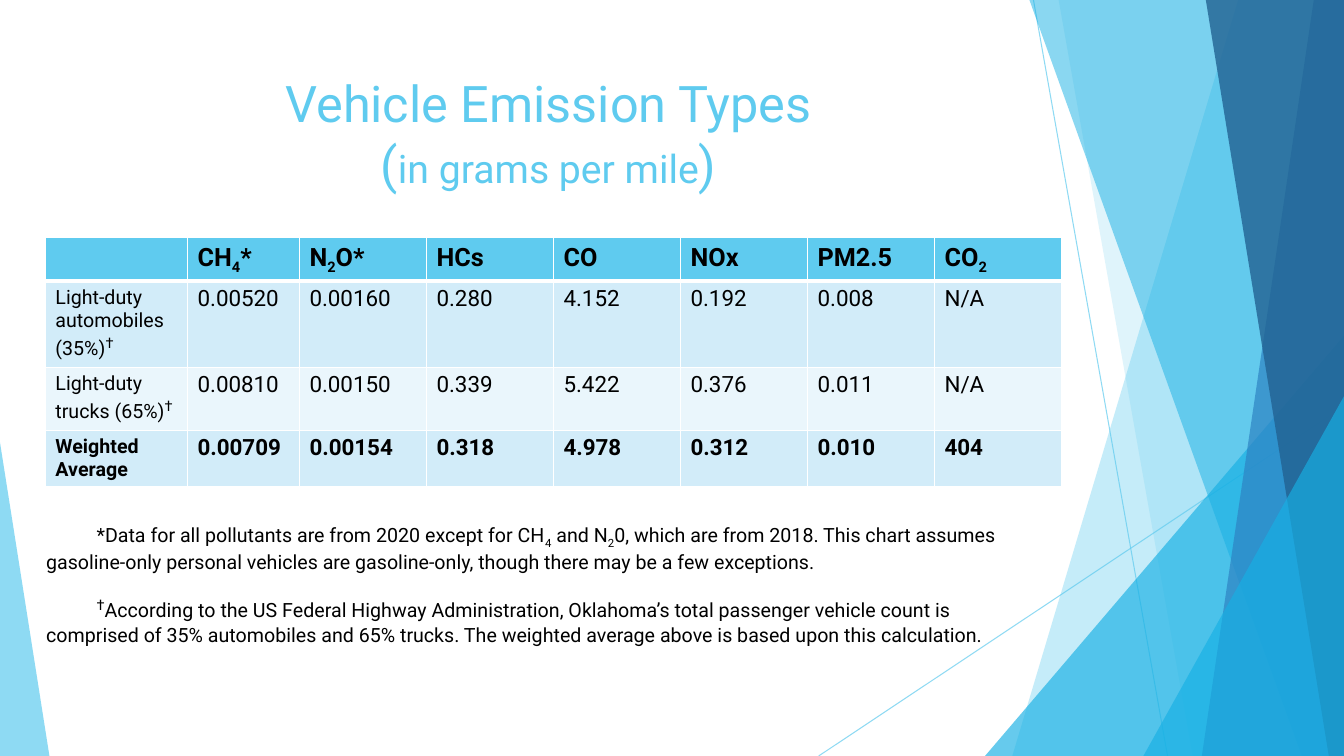
"""Build a slide with a table of vehicle emissions in grams per mile."""
from dataclasses import dataclass

from lxml import etree
from pptx import Presentation
from pptx import util as u
from pptx.dml.color import RGBColor
from pptx.enum import shapes, text
from pptx.oxml.ns import qn


@dataclass(frozen=True)
class Theme:
    font: str = "Roboto"
    sky: str = "5FCBEF"
    cyan: str = "17B0E4"
    blue: str = "2E83C3"
    navy: str = "226292"
    ink: str = "000000"
    white: str = "FFFFFF"
    odd_row: str = "D2ECF9"
    even_row: str = "EAF6FC"
    title: int = 36
    unit: int = 28
    header: int = 18
    value: int = 16
    small: int = 14


theme = Theme()
SUB, SUP = -25, 30


def paint(fill, colour, opacity=100):
    fill.solid()
    fill.fore_color.rgb = RGBColor.from_string(colour)
    if opacity < 100:
        for tint in fill._xPr.iter(qn("a:srgbClr")):
            etree.SubElement(tint, qn("a:alpha"), val=str(opacity * 1000))


def write(paragraph, pieces, colour=theme.ink, bold=False):
    for words, size, baseline in pieces:
        if words == "\n":
            paragraph.add_line_break()
            etree.SubElement(paragraph._p[-1], qn("a:rPr"), sz=str(size * 100))
            continue
        run = paragraph.add_run()
        run.text = words
        run.font.name = theme.font
        run.font.size = u.Pt(size)
        run.font.bold = bold
        run.font.color.rgb = RGBColor.from_string(colour)
        if baseline:
            run._r.get_or_add_rPr().set("baseline", str(baseline * 1000))


deck = Presentation()
deck.slide_width, deck.slide_height = u.Inches(13.33), u.Inches(7.5)
right, bottom = deck.slide_width, deck.slide_height
slide = deck.slides.add_slide(deck.slide_layouts[5])

rays = [((10.25, 0), (11.58, 7.5)), ((13.33, 4.03), (8.12, 7.5))]
for start, end in rays:
    ray = slide.shapes.add_connector(
        shapes.MSO_CONNECTOR.STRAIGHT, *map(u.Inches, start + end))
    ray.line.width = u.Pt(0.75)
    paint(ray.line.fill, theme.sky, 70)
    etree.SubElement(ray._element.spPr, qn("a:effectLst"))

bands = [
    ("edge", (12.28, 10.04), theme.sky, 36),
    ("edge", (10.5, 11.83), theme.sky, 20),
    ("corner", (9.77, 3.33, 3.56, 1), theme.cyan, 66),
    ("edge", (10.21, 12.91), theme.cyan, 50),
    ("edge", (13.03, 11.92), theme.blue, 70),
    ("edge", (11.96, 13.18), theme.navy, 80),
    ("corner", (11.34, 3.93, 1.99, 1), theme.cyan, 66),
    ("corner", (0, 4.39, 0.49, 0), theme.sky, 70),
]
for kind, outline, colour, opacity in bands:
    if kind == "edge":
        upper, lower = map(u.Inches, outline)
        pen = slide.shapes.build_freeform(upper, 0)
        pen.add_line_segments([(right, 0), (right, bottom), (lower, bottom)])
        band = pen.convert_to_shape()
    else:
        left, top, width = map(u.Inches, outline[:3])
        band = slide.shapes.add_shape(
            shapes.MSO_SHAPE.ISOSCELES_TRIANGLE, left, top, width, bottom - top)
        band.adjustments[0] = outline[3]
    paint(band.fill, colour, opacity)
    band.line.fill.background()
    band.shadow.inherit = False

heading = slide.shapes.title
heading.left, heading.top = u.Inches(0.74), u.Inches(0.67)
heading.width, heading.height = u.Inches(9.4), u.Inches(1.44)
heading.text_frame.auto_size = text.MSO_AUTO_SIZE.NONE
heading.text_frame.vertical_anchor = text.MSO_ANCHOR.TOP
heading_line = heading.text_frame.paragraphs[0]
heading_line.alignment = text.PP_ALIGN.CENTER
write(heading_line, [
    ("Vehicle Emission Types", theme.title, 0), ("\n", theme.title, 0),
    ("(", theme.title, 0), ("in grams per mile", theme.unit, 0),
    (")", theme.title, 0)], theme.sky)

dagger = ("†", theme.header, SUP)
pollutants = [
    [],
    [("CH", 18, 0), ("4", 18, SUB), ("*", 18, 0)],
    [("N", 18, 0), ("2", 18, SUB), ("O*", 18, 0)],
    *[[(name, theme.header, 0)] for name in ("HCs", "CO", "NOx", "PM2.5")],
    [("CO", 18, 0), ("2", 18, SUB)],
]
vehicles = [
    ([("Light-duty automobiles (35%)", theme.small, 0), dagger],
     "0.00520 0.00160 0.280 4.152 0.192 0.008 N/A"),
    ([("Light-duty trucks (65%)", theme.small, 0), dagger],
     "0.00810 0.00150 0.339 5.422 0.376 0.011 N/A"),
    ([("Weighted Average", theme.small, 0)],
     "0.00709 0.00154 0.318 4.978 0.312 0.010 404"),
]
rows = [pollutants] + [
    [label] + [[(value, theme.value, 0)] for value in values.split()]
    for label, values in vehicles]
row_fills = [theme.sky, theme.odd_row, theme.even_row, theme.odd_row]
columns = [1.41, 1.11] + [1.26] * 6
row_height = 0.41

emissions = slide.shapes.add_table(
    len(rows), len(columns), u.Inches(0.45), u.Inches(2.36),
    u.Inches(sum(columns)), u.Inches(row_height * len(rows))).table
for column, width in zip(emissions.columns, columns):
    column.width = u.Inches(width)
for r, (row, row_fill) in enumerate(zip(rows, row_fills)):
    for c, pieces in enumerate(row):
        cell = emissions.cell(r, c)
        borders = cell._tc.get_or_add_tcPr()
        for side in ("lnL", "lnR", "lnT", "lnB"):
            heavy = (r, side) in ((0, "lnB"), (1, "lnT"))
            border = etree.SubElement(
                borders, qn(f"a:{side}"), w=str(u.Pt(3 if heavy else 1)))
            ink = etree.SubElement(border, qn("a:solidFill"))
            etree.SubElement(ink, qn("a:srgbClr"), val=theme.white)
        paint(cell.fill, row_fill)
        write(cell.text_frame.paragraphs[0], pieces,
              bold=r in (0, len(rows) - 1))

footnotes = [
    (5.14, [
        ("*Data for all pollutants are from 2020 except for CH", 14, 0),
        ("4", 14, SUB), (" and N", 14, 0), ("2", 14, SUB),
        ("0, which are from 2018. This chart assumes ", 14, 0), ("\n", 14, 0),
        ("gasoline-only personal vehicles are gasoline-only, "
         "though there may be a few exceptions.", 14, 0)]),
    (5.83, [
        dagger,
        ("According to the US Federal Highway Administration, "
         "Oklahoma’s total passenger vehicle count is ", 14, 0), ("\n", 14, 0),
        ("comprised of 35% automobiles and 65% trucks. "
         "The weighted average above is based upon this calculation.", 14, 0)]),
]
for top, pieces in footnotes:
    footnote = slide.shapes.add_textbox(
        u.Inches(0.36), u.Inches(top), u.Inches(10.17), u.Inches(0.57)).text_frame
    footnote.word_wrap = True
    footnote.auto_size = text.MSO_AUTO_SIZE.SHAPE_TO_FIT_TEXT
    note = footnote.paragraphs[0]
    note._p.get_or_add_pPr().set("indent", str(u.Inches(0.5)))
    write(note, pieces)

deck.save("out.pptx")
